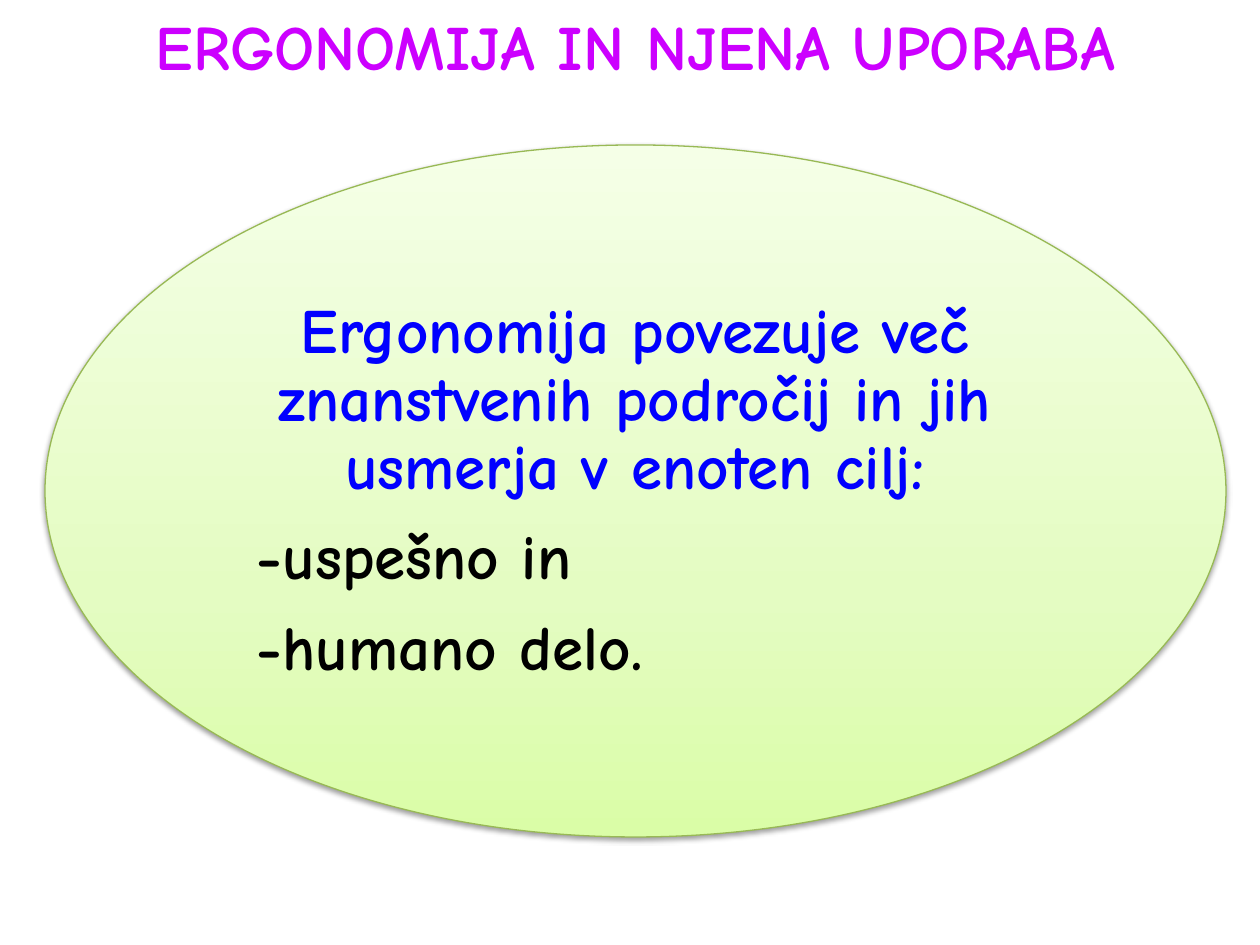
import pptx
import pptx.util
import pptx.dml.color
import pptx.enum.shapes
import pptx.enum.text
import pptx.oxml
import pptx.oxml.ns

EMU_PER_PX = 914400 / 126
FONT = "Comic Neue"
CENTER = pptx.enum.text.PP_ALIGN.CENTER
LEFT = pptx.enum.text.PP_ALIGN.LEFT


def box(*lengths):
    """Turn lengths in px into EMU."""
    return [pptx.util.Emu(round(length * EMU_PER_PX)) for length in lengths]


def add_run(paragraph, text, color):
    run = paragraph.add_run()
    run.text = text
    run.font.name = FONT
    run.font.size = pptx.util.Pt(36)
    run.font.bold = True
    run.font.color.rgb = pptx.dml.color.RGBColor.from_string(color)


presentation = pptx.Presentation()
presentation.slide_width, presentation.slide_height = box(1260, 945)
slide = presentation.slides.add_slide(presentation.slide_layouts[6])

# Title
title = slide.shapes.add_textbox(*box(25, 16, 1221, 70))
title.text_frame.word_wrap = True
paragraph = title.text_frame.paragraphs[0]
paragraph.alignment = CENTER
paragraph.line_spacing = 0.8
add_run(paragraph, "ERGONOMIJA IN NJENA UPORABA", "CC00FF")

# Ellipse with a three-stop gradient and a soft shadow below
ellipse = slide.shapes.add_shape(
    pptx.enum.shapes.MSO_SHAPE.OVAL, *box(45, 145, 1181, 692))
ellipse.line.color.rgb = pptx.dml.color.RGBColor.from_string("98B955")
ellipse.line.width = pptx.util.Pt(0.75)
ellipse.shadow.inherit = False
ellipse.fill.gradient()
ellipse.fill.gradient_angle = 90
namespace = pptx.oxml.ns.nsdecls("a")
stops = "".join(
    f'<a:gs pos="{position * 1000}"><a:srgbClr val="{color}"/></a:gs>'
    for position, color in [(0, "DAFDA7"), (35, "E4FCC2"), (100, "F5FFE7")])
properties = ellipse.element.spPr
old_stops = properties.find(".//" + pptx.oxml.ns.qn("a:gsLst"))
old_stops.getparent().replace(
    old_stops, pptx.oxml.parse_xml(f"<a:gsLst {namespace}>{stops}</a:gsLst>"))
properties.find(pptx.oxml.ns.qn("a:effectLst")).append(pptx.oxml.parse_xml(
    f'<a:outerShdw {namespace} blurRad="39370" dist="20320" dir="5400000" rotWithShape="0">'
    '<a:srgbClr val="000000"><a:alpha val="38000"/></a:srgbClr></a:outerShdw>'))

# Statement inside the ellipse
statement = slide.shapes.add_textbox(*box(218, 247, 834, 489))
frame = statement.text_frame
frame.word_wrap = True
frame.vertical_anchor = pptx.enum.text.MSO_ANCHOR.MIDDLE
frame.margin_left, frame.margin_top, frame.margin_right, frame.margin_bottom = box(19, 19, 19, 19)
lines = [
    ("Ergonomija povezuje več znanstvenih področij in jih usmerja v enoten cilj:",
     "0000FF", CENTER, 0),
    ("-uspešno in", "000000", LEFT, 20),
    ("-humano delo.", "000000", LEFT, 20),
]
for index, (text, color, alignment, indent) in enumerate(lines):
    paragraph = frame.add_paragraph() if index else frame.paragraphs[0]
    paragraph.alignment = alignment
    paragraph.line_spacing = 0.9
    paragraph.space_after = pptx.util.Pt(12.6)
    if indent:
        paragraph._p.get_or_add_pPr().set("marL", str(box(indent)[0]))
    add_run(paragraph, text, color)

presentation.save("out.pptx")
